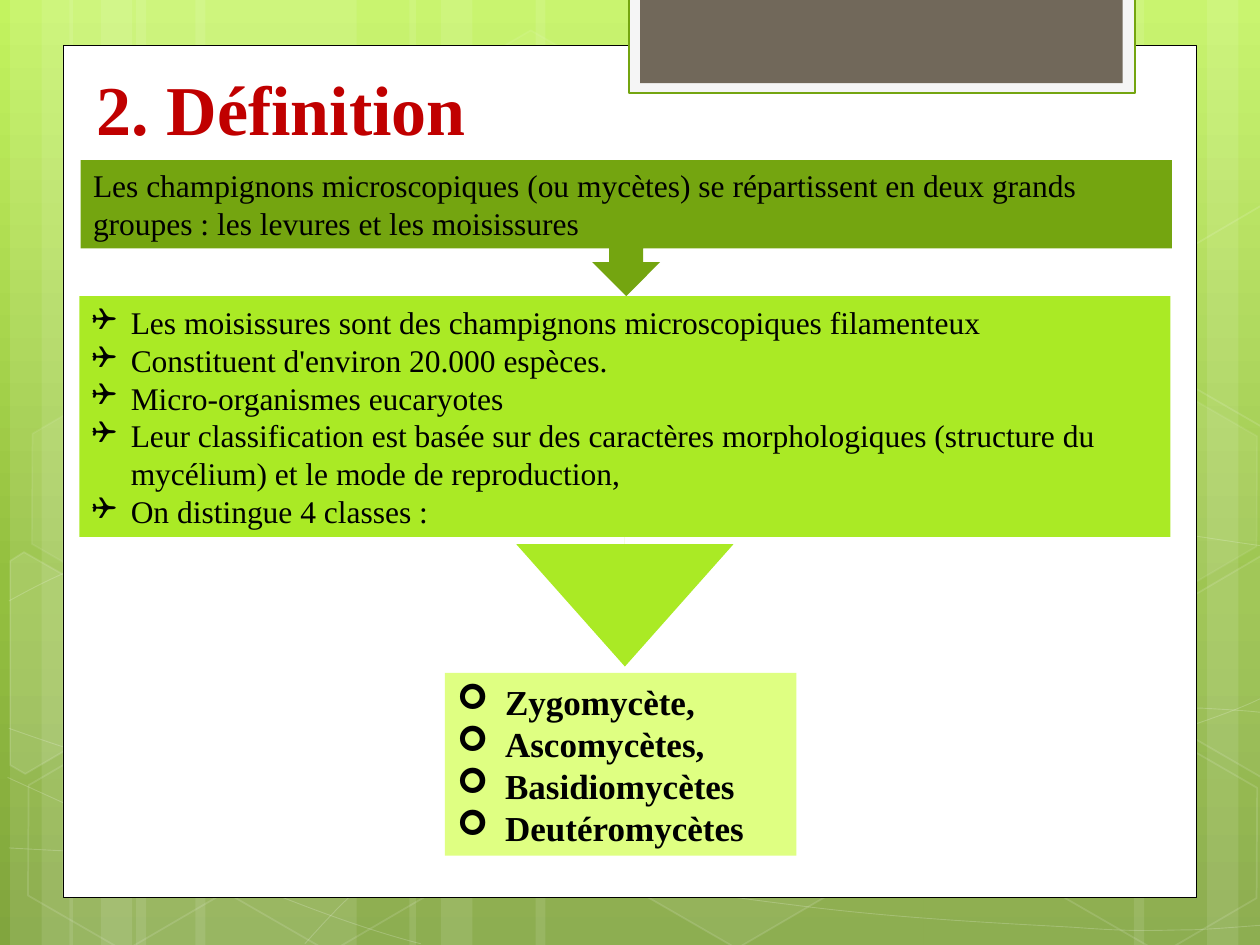
from copy import deepcopy
from dataclasses import dataclass
from math import cos, radians, sin

from lxml.etree import SubElement
from pptx import Presentation
from pptx.dml.color import RGBColor
from pptx.enum.shapes import MSO_SHAPE as Preset
from pptx.enum.text import MSO_ANCHOR as Anchor, MSO_AUTO_SIZE as AutoSize, PP_ALIGN as Align
from pptx.oxml.ns import qn
from pptx.util import Inches, Pt

WIDTH, HEIGHT = Inches(10), Inches(7.5)
COLUMNS, ROWS = 100, 75
TILT = 30


@dataclass(frozen=True)
class Theme:
    font: str = "Times New Roman"
    bullet_font: str = "Wingdings"
    title_size: int = 40
    body_size: int = 18
    class_size: int = 20
    white: str = "FFFFFF"
    black: str = "000000"
    red: str = "C00000"
    green: str = "74A510"
    lime: str = "AAEA25"
    pale: str = "DFFF82"
    tab_edge: str = "F5F5F5"
    tab: str = "71685A"
    sky: tuple = ((0, "C3F35F"), (0.62, "93BF3F"), (1, "81A53E"))


THEME = Theme()

STRIPES = [
    (10.8, 17.5), (0.8, 5), (3.3, 8.3), (15.5, 17.5), (5.5, 5), (8, 8.3),
    (73.3, 17.5), (95.8, 5), (90, 8.3), (42.5, 30.8), (32.5, 5), (35, 8.3),
]

CURVES = [
    [(0.7, 67.3), (6.1, 67.6), (11.5, 67.9), (19, 67.8), (26.5, 67.7), (35.8, 67.5),
     (45.8, 66.5), (55.8, 65.5), (70, 63.6), (79.2, 61.7), (88.3, 59.8), (97.7, 56.8),
     (100.7, 55.1)],
    [(0.7, 47.7), (3.6, 46.1), (6.5, 44.6), (12.1, 43.1), (17.8, 41.6), (25.9, 39.4),
     (34.7, 38.7), (43.6, 38), (54.4, 37.9), (65.4, 38.7), (76.4, 39.5), (94.7, 42.6),
     (100.7, 43.4)],
    [(0.6, 61.7), (12.7, 67.2), (24.7, 72.7), (33.4, 74.9)],
    [(0.7, 57.8), (3.8, 58.9), (7, 60), (12.8, 61.6), (18.6, 63.1), (27.3, 65.6),
     (35.7, 67.3), (44, 69), (54.5, 70.8), (62.8, 71.8), (71.1, 72.9), (80, 73.3),
     (85.3, 73.6), (90.5, 74), (91.9, 73.8), (94.5, 73.8), (97.1, 73.7), (98.9, 73.5),
     (100.7, 73.4)],
    [(24.2, 74.9), (26, 72.9), (27.8, 70.9), (30.2, 69.1), (32.6, 67.3), (36, 65.3),
     (38.8, 63.9), (41.6, 62.5), (43.3, 61.9), (47, 60.9), (50.6, 59.9), (57.3, 58.5),
     (60.8, 57.8), (64.4, 57.1), (64.9, 57.1), (68, 56.9), (71.1, 56.6), (76, 56.3),
     (79.4, 56.2), (82.9, 56.1), (88.6, 56.2), (88.6, 56.2), (88.6, 56.2), (95.3, 56.2),
     (95.3, 56.2), (97.1, 56.3), (98.8, 56.4), (99.7, 56.5), (100.6, 56.6), (100.3, 56.5),
     (100.6, 56.6)],
]

HEXAGONS = [
    (33.4, 3.6, 4, 8), (49.7, 58.9, 6, 12), (1.1, 59.1, 0, 12), (1.4, 31.2, 7, 8),
    (17.4, 59.2, 0, 12), (75.3, 45.3, 10, 12), (83.4, 59.3, 0, 12), (83.4, 31.4, 7, 8),
]

CUT_HEXAGONS = [
    ((3.6, 53.5), 10, [(0.8, 44.5), (1.9, 43.8), (9.6, 48.2), (9.5, 57), (2, 61.4),
                       (0.8, 60.7)]),
    ((98.5, 52), 4, [(92.6, 48.5), (100.1, 44.1), (100.9, 44.6), (100.9, 61.3),
                     (100.2, 61.7), (92.6, 57.3)]),
    ((98.5, 24.1), 0, [(92.6, 20.7), (100.1, 16.3), (101, 16.8), (100.9, 33.5),
                       (100.2, 33.9), (92.6, 29.5)]),
]

INTRODUCTION = [
    "Les champignons microscopiques (ou mycètes) se répartissent en deux grands "
    "groupes : les levures et les moisissures"
]
FEATURES = [
    "Les moisissures sont des champignons microscopiques filamenteux",
    "Constituent d'environ 20.000 espèces.",
    "Micro-organismes eucaryotes",
    "Leur classification est basée sur des caractères morphologiques (structure du "
    "mycélium) et le mode de reproduction,",
    "On distingue 4 classes :",
]
CLASSES = ["Zygomycète,", "Ascomycètes,", "Basidiomycètes", "Deutéromycètes"]


def place(x, y):
    return int(WIDTH * x / COLUMNS), int(HEIGHT * y / ROWS)


def paint(fill, color, opacity):
    if color is None or opacity == 0:
        fill.background()
        return
    fill.solid()
    fill.fore_color.rgb = RGBColor.from_string(color)
    if opacity < 100:
        tone = fill._xPr.find(qn("a:solidFill"))[0]
        SubElement(tone, qn("a:alpha"), val=str(opacity * 1000))


def dress(shape, fill=None, opacity=100, line=None, weight=1, line_opacity=100):
    shape.shadow.inherit = False
    paint(shape.fill, fill, opacity)
    paint(shape.line.fill, line, line_opacity)
    if line:
        shape.line.width = Pt(weight)


def add_block(page, preset, left, top, width, height, **style):
    shape = page.shapes.add_shape(preset, *place(left, top), *place(width, height))
    dress(shape, **style)
    return shape


def add_outline(page, points, close, **style):
    start, *others = [place(*point) for point in points]
    builder = page.shapes.build_freeform(*start)
    builder.add_line_segments(others, close=close)
    shape = builder.convert_to_shape()
    dress(shape, **style)
    return shape


def add_curve(page, knots, **style):
    shape = add_outline(page, knots, False, **style)
    outline = next(shape._element.iter(qn("a:path")))
    segments = outline.findall(qn("a:lnTo"))
    for first in range(0, len(segments), 3):
        bend = SubElement(outline, qn("a:cubicBezTo"))
        for segment in segments[first:first + 3]:
            bend.append(segment[0])
            outline.remove(segment)


def turn_back(point, pivot):
    across, down = point[0] - pivot[0], point[1] - pivot[1]
    cosine, sine = cos(radians(TILT)), sin(radians(TILT))
    return (pivot[0] + across * cosine + down * sine,
            pivot[1] - across * sine + down * cosine)


def write_text(box, lines, size, color=THEME.black, bold=False, bullet=None, hang=0,
               anchor=Anchor.MIDDLE):
    frame = box.text_frame
    frame.word_wrap = True
    frame.auto_size = AutoSize.SHAPE_TO_FIT_TEXT
    frame.vertical_anchor = anchor
    for index, line in enumerate(lines):
        para = frame.add_paragraph() if index else frame.paragraphs[0]
        para.alignment = Align.LEFT
        if bullet:
            layout = para._p.get_or_add_pPr()
            layout.set("marL", str(Inches(hang)))
            layout.set("indent", str(-Inches(hang)))
            SubElement(layout, qn("a:buFont"), typeface=THEME.bullet_font)
            SubElement(layout, qn("a:buChar"), char=bullet)
        span = para.add_run()
        span.text = line
        span.font.name = THEME.font
        span.font.size = Pt(size)
        span.font.bold = bold
        span.font.color.rgb = RGBColor.from_string(color)


def paint_background(page):
    fill = page.background.fill
    fill.gradient()
    fill.gradient_angle = 270
    stops = next(page._element.iter(qn("a:gsLst")))
    stops.append(deepcopy(stops[-1]))
    for stop, (position, color) in zip(fill.gradient_stops, THEME.sky):
        stop.position = position
        stop.color.rgb = RGBColor.from_string(color)


def draw_backdrop(page):
    white = THEME.white
    paint_background(page)
    for left, width in STRIPES:
        add_block(page, Preset.RECTANGLE, left, 0, width, ROWS, fill=white, opacity=10)
    for knots in CURVES:
        add_curve(page, knots, line=white, weight=0.5, line_opacity=20)
    for left, top, opacity, line_opacity in HEXAGONS:
        hexagon = add_block(page, Preset.HEXAGON, left, top, 17.5, 15.2, fill=white,
                            opacity=opacity, line=white, line_opacity=line_opacity)
        hexagon.adjustments[0] = 0.285
        hexagon.rotation = TILT
    for pivot, opacity, corners in CUT_HEXAGONS:
        points = [turn_back(corner, pivot) for corner in corners]
        piece = add_outline(page, points, True, fill=white, opacity=opacity, line=white,
                            line_opacity=12)
        piece.rotation = TILT


def draw_panel(page):
    add_block(page, Preset.RECTANGLE, 5, 3.6, 90, 67.6, fill=THEME.white,
              line=THEME.black, weight=0.5)
    add_block(page, Preset.RECTANGLE, 49.9, -0.2, 40.2, 7.6, fill=THEME.tab_edge,
              line=THEME.green, weight=1.25)
    add_block(page, Preset.RECTANGLE, 50.8, -0.2, 38.3, 6.8, fill=THEME.tab)


def draw_content(page):
    title = page.shapes.add_textbox(*place(6.7, 4.7), *place(37.8, 7.7))
    write_text(title, ["2. Définition"], THEME.title_size, color=THEME.red, bold=True,
               anchor=Anchor.TOP)

    introduction = add_block(page, Preset.DOWN_ARROW_CALLOUT, 6.4, 12.7, 86.6, 10.8,
                             fill=THEME.green)
    write_text(introduction, INTRODUCTION, THEME.body_size)

    features = add_block(page, Preset.DOWN_ARROW_CALLOUT, 6.3, 23.5, 86.6, 29.4,
                         fill=THEME.lime)
    for index, share in enumerate((0, 0.293, 0.33, 0.65)):
        features.adjustments[index] = share
    write_text(features, FEATURES, THEME.body_size, bullet="❑", hang=0.31)

    classes = add_block(page, Preset.RECTANGLE, 35.3, 53.4, 27.9, 14.5, fill=THEME.pale)
    write_text(classes, CLASSES, THEME.class_size, bold=True, bullet="➢", hang=0.38)


def main():
    deck = Presentation()
    deck.slide_width, deck.slide_height = WIDTH, HEIGHT
    page = deck.slides.add_slide(deck.slide_layouts[6])
    draw_backdrop(page)
    draw_panel(page)
    draw_content(page)
    deck.save("out.pptx")


if __name__ == "__main__":
    main()
